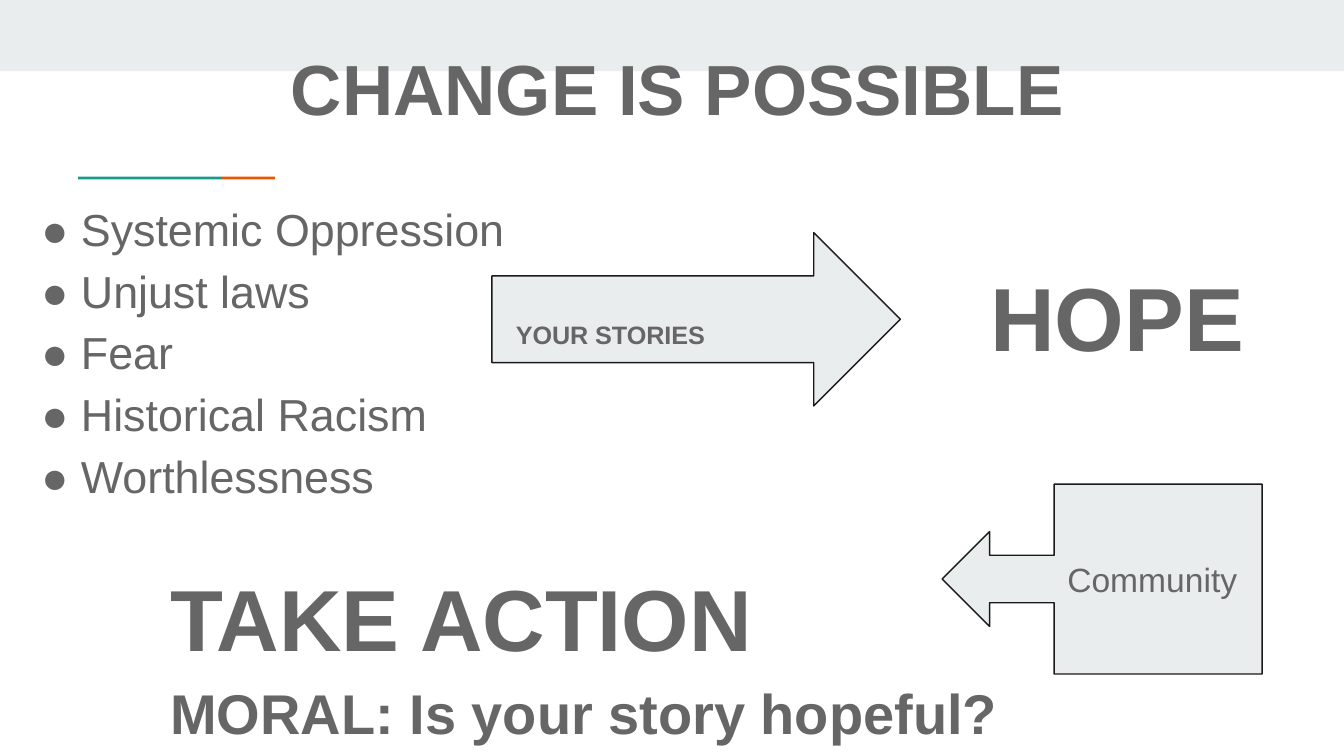
import dataclasses

import pptx
import pptx.dml.color
import pptx.enum.shapes
import pptx.enum.text
import pptx.util

Pt = pptx.util.Pt
Shape = pptx.enum.shapes.MSO_SHAPE
Align = pptx.enum.text.PP_ALIGN
Anchor = pptx.enum.text.MSO_ANCHOR


@dataclasses.dataclass(frozen=True)
class Theme:
    """Colours, type sizes and spacing of the slide."""
    text: str = "666666"
    panel: str = "E9EDEE"
    outline: str = "1A1A1A"
    teal: str = "1A9988"
    orange: str = "EB5600"
    font: str = "Arial"
    title: float = 38
    body: float = 24
    hope: float = 48
    stories: float = 23.3
    action: float = 80
    moral: float = 30
    label: float = 18
    inset: float = 7.2
    spacing: float = 1.15


THEME = Theme()


def colour(value):
    """Return an RGB colour from its hex value."""
    return pptx.dml.color.RGBColor.from_string(value)


def apply_format(target, values):
    """Set each attribute of the target from a dict."""
    for name, value in values.items():
        setattr(target, name, value)


def write_lines(shape, lines, anchor=Anchor.TOP, align=Align.LEFT, spacing=THEME.spacing):
    """Fill a shape with paragraphs of (text, size, bold, baseline percent)."""
    frame = shape.text_frame
    margins = {f"margin_{side}": Pt(THEME.inset) for side in ("left", "top", "right", "bottom")}
    apply_format(frame, {"word_wrap": True, "vertical_anchor": anchor, **margins})
    for index, (text, size, bold, baseline) in enumerate(lines):
        para = frame.add_paragraph() if index else frame.paragraphs[0]
        apply_format(para, {"alignment": align, "line_spacing": spacing})
        span = para.add_run()
        span.text = text
        apply_format(span.font, {"name": THEME.font, "size": Pt(size), "bold": bold})
        span.font.color.rgb = colour(THEME.text)
        if baseline:
            span._r.get_or_add_rPr().set("baseline", str(baseline * 1000))


def add_text(page, box, lines, **layout):
    """Place a text box in the given box."""
    write_lines(page.shapes.add_textbox(*map(Pt, box)), lines, **layout)


def add_block(page, kind, box, fill, outline=None):
    """Place a filled preset shape in the given box."""
    shape = page.shapes.add_shape(kind, *map(Pt, box))
    shape.shadow.inherit = False
    shape.fill.solid()
    shape.fill.fore_color.rgb = colour(fill)
    if outline:
        shape.line.color.rgb = colour(outline)
        shape.line.width = Pt(0.75)
    else:
        shape.line.fill.background()
    return shape


def add_accent(page, box):
    """Place the two-colour rule, teal first and orange last."""
    left, top, width, height = box
    teal_width = width * 0.73
    add_block(page, Shape.RECTANGLE, (left, top, teal_width, height), THEME.teal)
    add_block(page, Shape.RECTANGLE,
              (left + teal_width, top, width - teal_width, height), THEME.orange)


def add_burdens(page, box):
    """Place the list of burdens."""
    burdens = ("Systemic Oppression", "Unjust laws", "Fear", "Historical Racism", "Worthlessness")
    add_text(page, box, [(f"● {burden}", THEME.body, False, 0) for burden in burdens])


def add_stories_arrow(page, box):
    """Place the right arrow with its raised caption."""
    left, top, width, height = box
    add_block(page, Shape.RIGHT_ARROW, box, THEME.panel, THEME.outline)
    add_text(page, (left + 5.8, top + height * 0.35, width * 0.83, 28.8),
             [("YOUR STORIES", THEME.stories, True, 30)])


def add_call_to_action(page, box):
    """Place the call to action and the moral below it."""
    add_text(page, box, [("TAKE ACTION", THEME.action, True, -25),
                         ("MORAL: Is your story hopeful?", THEME.moral, True, 0)])


def add_community(page, box):
    """Place the left arrow callout."""
    callout = add_block(page, Shape.LEFT_ARROW_CALLOUT, box, THEME.panel, THEME.outline)
    for index, value in enumerate((0.25, 0.25, 0.25, 0.65)):
        callout.adjustments[index] = value
    write_lines(callout, [("Community", THEME.label, False, 0)],
                anchor=Anchor.MIDDLE, spacing=1.0)


def build_slide(page, box):
    """Place every region of the slide inside the given box."""
    left, top, width, height = box
    add_block(page, Shape.RECTANGLE, (left, top, width, 38.2), THEME.panel)
    add_accent(page, (left + 41.8, top + 94.6, 105.6, 1.5))
    add_text(page, (left + 65.5, top + 10.1, 605.5, 42.5),
             [("CHANGE IS POSSIBLE ", THEME.title, True, 0)], align=Align.CENTER)
    add_burdens(page, (left + 15.1, top + 96.5, 605.5, 194.4))
    add_text(page, (left + 523.4, top + 124.6, 162.7, 183.6),
             [("HOPE", THEME.hope, True, 0)])
    add_stories_arrow(page, (left + 263.5, top + 124.6, 218.9, 92.9))
    add_call_to_action(page, (left + 84.2, top + 225.4, 536.4, 57.6))
    add_community(page, (left + 504.7, top + 259.4, 171.4, 101.7))


def main():
    """Build and save the deck."""
    deck = pptx.Presentation()
    apply_format(deck, {"slide_width": Pt(720), "slide_height": Pt(405)})
    page = deck.slides.add_slide(deck.slide_layouts[6])
    build_slide(page, (0, 0, 720, 405))
    deck.save("out.pptx")


if __name__ == "__main__":
    main()
